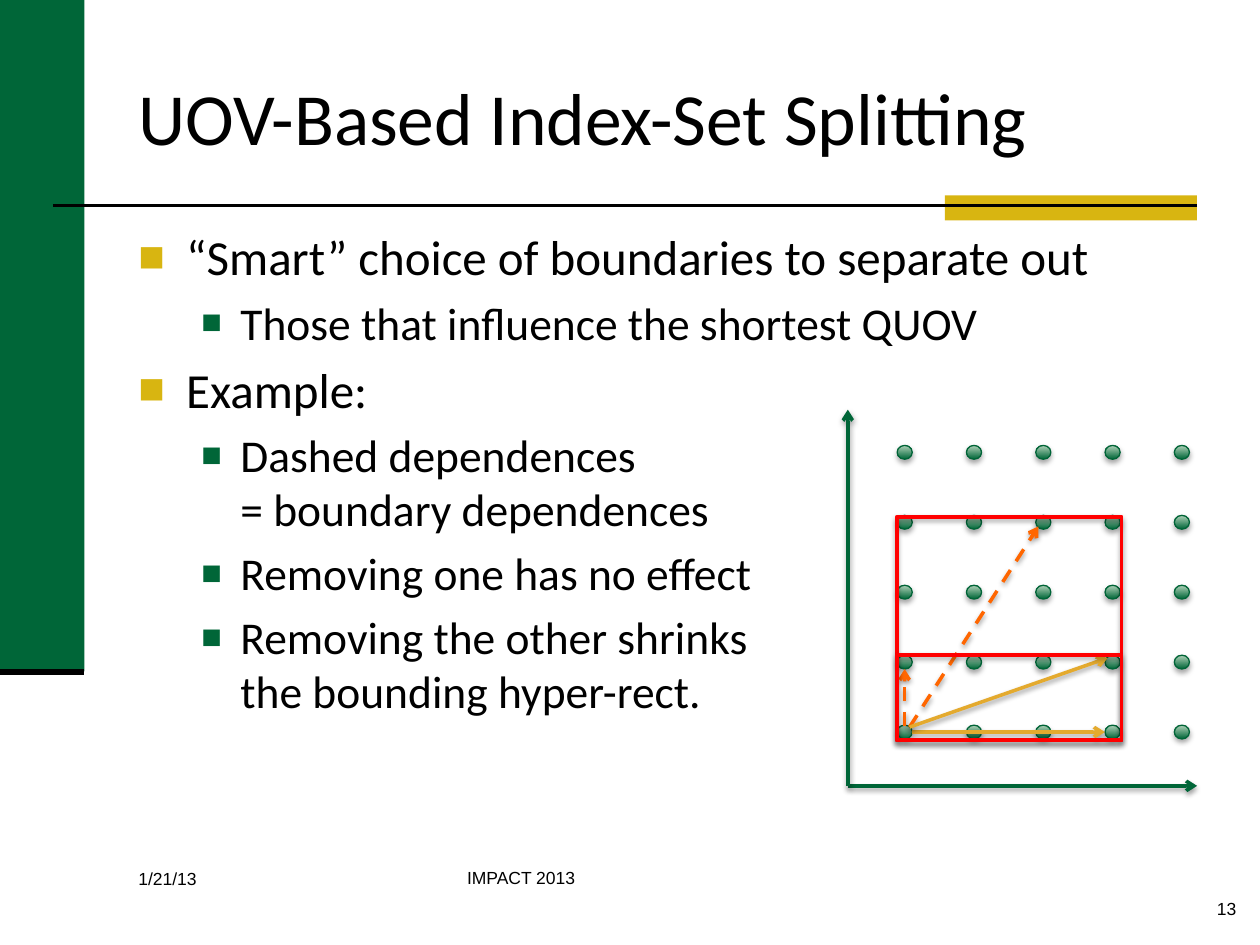
from dataclasses import dataclass
from itertools import product
from typing import Optional

from lxml import etree
from pptx import Presentation
from pptx import util as u
from pptx.dml.color import RGBColor
from pptx.enum import dml, shapes, text
from pptx.oxml.ns import qn


@dataclass(frozen=True)
class Theme:
    green: str = "006638"
    dot_light: str = "B1D2B9"
    dot_edge: str = "006437"
    gold: str = "D8B511"
    amber: str = "E4AA2E"
    orange: str = "FF6600"
    red: str = "FF0000"
    black: str = "000000"
    heading_font: str = "Calibri"
    footer_font: str = "Arial"
    title_size: float = 42
    level_sizes: tuple = (28, 26)
    footer_size: float = 10


@dataclass(frozen=True)
class Lattice:
    """Iteration points; columns run right and rows run up from the first dot."""
    left: float = 7.18
    bottom: float = 5.81
    column: float = 0.55
    row: float = 0.555
    count: int = 5

    def at(self, column: float, row: float) -> tuple:
        return self.left + column * self.column, self.bottom - row * self.row


@dataclass(frozen=True)
class Arrow:
    start: tuple
    end: tuple
    color: str
    dashed: bool = False


@dataclass(frozen=True)
class Bullet:
    level: int
    words: str


@dataclass(frozen=True)
class BulletStyle:
    margin: float
    hanging: float
    color: str
    percent: int


@dataclass(frozen=True)
class Footer:
    box: tuple
    words: str
    align: text.PP_ALIGN


THEME = Theme()
LATTICE = Lattice()
DOT_SIZE = (0.12, 0.11)
BULLET_STYLES = (BulletStyle(0.38, 0.38, THEME.gold, 90),
                 BulletStyle(0.81, 0.31, THEME.green, 75))
BULLETS = (
    Bullet(0, "“Smart” choice of boundaries to separate out"),
    Bullet(1, "Those that influence the shortest QUOV"),
    Bullet(0, "Example:"),
    Bullet(1, "Dashed dependences\v= boundary dependences"),
    Bullet(1, "Removing one has no effect"),
    Bullet(1, "Removing the other shrinks\vthe bounding hyper-rect."),
)
AXIS_ORIGIN = (-0.82, -0.77)
ARROWS = (
    Arrow(AXIS_ORIGIN, (4.22, -0.77), THEME.green),
    Arrow(AXIS_ORIGIN, (-0.82, 4.61), THEME.green),
    Arrow((0.11, 0), (2.89, 0), THEME.amber),
    Arrow((0, 0.09), (0, 0.9), THEME.orange, dashed=True),
    Arrow((0.07, 0.07), (1.93, 2.94), THEME.orange, dashed=True),
    Arrow((0.07, 0.07), (2.93, 1.06), THEME.amber),
)
BOUND_TOPS = (3.08, 1.1)
FOOTERS = (
    Footer((1, 6.84, 2.17, 0.5), "1/21/13", text.PP_ALIGN.LEFT),
    Footer((2.51, 6.83, 3.25, 0.5), "IMPACT 2013", text.PP_ALIGN.CENTER),
    Footer((7.83, 7.08, 2.08, 0.25), "13", text.PP_ALIGN.RIGHT),
)


def inches(*values: float) -> list:
    return [u.Inches(value) for value in values]


def add_xml(parent, tag: str, **attributes):
    return etree.SubElement(parent, qn(tag), attributes)


def set_shadow(shape, opacity: int = 0) -> None:
    """Give an outlined shape a soft shadow below it, or none at opacity 0."""
    effects = add_xml(shape._element.spPr, "a:effectLst")
    if opacity:
        shadow = add_xml(effects, "a:outerShdw", blurRad=str(u.Pt(3.1)), dist=str(u.Pt(1.7)),
                         dir="5400000", rotWithShape="0")
        color = add_xml(shadow, "a:srgbClr", val=THEME.black)
        add_xml(color, "a:alpha", val=str(opacity * 1000))


def set_line(shape, color: str, width: float) -> None:
    shape.line.color.rgb = RGBColor.from_string(color)
    shape.line.width = u.Pt(width)


def format_runs(paragraph, size: float, font: str) -> None:
    values = {"size": u.Pt(size), "name": font}
    for run in paragraph.runs:
        for name, value in values.items():
            setattr(run.font, name, value)
        run.font.color.rgb = RGBColor.from_string(THEME.black)


def add_block(slide, box: tuple, color: str) -> None:
    block = slide.shapes.add_shape(shapes.MSO_SHAPE.RECTANGLE, *inches(*box))
    block.fill.solid()
    block.fill.fore_color.rgb = RGBColor.from_string(color)
    block.line.fill.background()
    set_shadow(block)


def add_line(slide, start: tuple, end: tuple, color: str, width: float, opacity: int = 0):
    line = slide.shapes.add_connector(shapes.MSO_CONNECTOR.STRAIGHT, *inches(*start, *end))
    set_line(line, color, width)
    set_shadow(line, opacity)
    return line


def add_arrow(slide, arrow: Arrow) -> None:
    line = add_line(slide, LATTICE.at(*arrow.start), LATTICE.at(*arrow.end), arrow.color, 2, 38)
    if arrow.dashed:
        line.line.dash_style = dml.MSO_LINE.DASH
    add_xml(line.line._get_or_add_ln(), "a:tailEnd", type="arrow")


def add_dot(slide, column: int, row: int) -> None:
    x, y = LATTICE.at(column, row)
    width, height = DOT_SIZE
    dot = slide.shapes.add_shape(shapes.MSO_SHAPE.OVAL,
                                 *inches(x - width / 2, y - height / 2, width, height))
    dot.fill.gradient()
    dot.fill.gradient_angle = 90
    for stop, position, color in zip(dot.fill.gradient_stops, (0, 1),
                                     (THEME.green, THEME.dot_light)):
        stop.position = position
        stop.color.rgb = RGBColor.from_string(color)
    set_line(dot, THEME.dot_edge, 0.75)
    set_shadow(dot, 35)


def add_bound(slide, top_row: float) -> None:
    left, top = LATTICE.at(-0.11, top_row)
    right, bottom = LATTICE.at(3.13, -0.12)
    bound = slide.shapes.add_shape(shapes.MSO_SHAPE.RECTANGLE,
                                   *inches(left, top, right - left, bottom - top))
    bound.fill.background()
    set_line(bound, THEME.red, 2.25)
    set_shadow(bound, 35)


def add_title(slide, words: str) -> None:
    title = slide.shapes.title
    title.left, title.top, title.width, title.height = inches(1, 0.3, 8.5, 1.25)
    title.text_frame.text = words
    title.text_frame.vertical_anchor = text.MSO_ANCHOR.MIDDLE
    paragraph = title.text_frame.paragraphs[0]
    paragraph.alignment = text.PP_ALIGN.LEFT
    format_runs(paragraph, THEME.title_size, THEME.heading_font)


def add_text_frame(slide, box: tuple):
    frame = slide.shapes.add_textbox(*inches(*box)).text_frame
    frame.word_wrap = True
    return frame


def write_bullet(paragraph, bullet: Bullet, space_before: Optional[float]) -> None:
    style = BULLET_STYLES[bullet.level]
    paragraph.text = bullet.words
    paragraph.level = bullet.level
    if space_before:
        paragraph.space_before = u.Pt(space_before)
    properties = paragraph._p.get_or_add_pPr()
    properties.set("marL", str(u.Inches(style.margin)))
    properties.set("indent", str(-u.Inches(style.hanging)))
    add_xml(add_xml(properties, "a:buClr"), "a:srgbClr", val=style.color)
    add_xml(properties, "a:buSzPct", val=str(style.percent * 1000))
    add_xml(properties, "a:buFont", typeface=THEME.footer_font)
    add_xml(properties, "a:buChar", char="■")
    format_runs(paragraph, THEME.level_sizes[bullet.level], THEME.heading_font)


def add_bullets(slide) -> None:
    frame = add_text_frame(slide, (1, 1.75, 8.5, 4.95))
    for index, bullet in enumerate(BULLETS):
        paragraph = frame.add_paragraph() if index else frame.paragraphs[0]
        space = 0.2 * THEME.level_sizes[bullet.level] if index else None
        write_bullet(paragraph, bullet, space)


def add_footer(slide, footer: Footer) -> None:
    paragraph = add_text_frame(slide, footer.box).paragraphs[0]
    paragraph.text = footer.words
    paragraph.alignment = footer.align
    format_runs(paragraph, THEME.footer_size, THEME.footer_font)


def main() -> None:
    presentation = Presentation()
    presentation.slide_width, presentation.slide_height = inches(10, 7.5)
    slide = presentation.slides.add_slide(presentation.slide_layouts[5])
    add_block(slide, (0, 0, 0.67, 5.33), THEME.green)
    add_block(slide, (7.5, 1.55, 2, 0.2), THEME.gold)
    add_line(slide, (0.42, 1.63), (9.5, 1.63), THEME.black, 1.5)
    add_line(slide, (0, 5.33), (0.67, 5.33), THEME.black, 3.5)
    add_title(slide, "UOV-Based Index-Set Splitting")
    add_bullets(slide)
    for footer in FOOTERS:
        add_footer(slide, footer)
    for column, row in product(range(LATTICE.count), repeat=2):
        add_dot(slide, column, row)
    for arrow in ARROWS:
        add_arrow(slide, arrow)
    for top_row in BOUND_TOPS:
        add_bound(slide, top_row)
    presentation.save("out.pptx")


if __name__ == "__main__":
    main()
